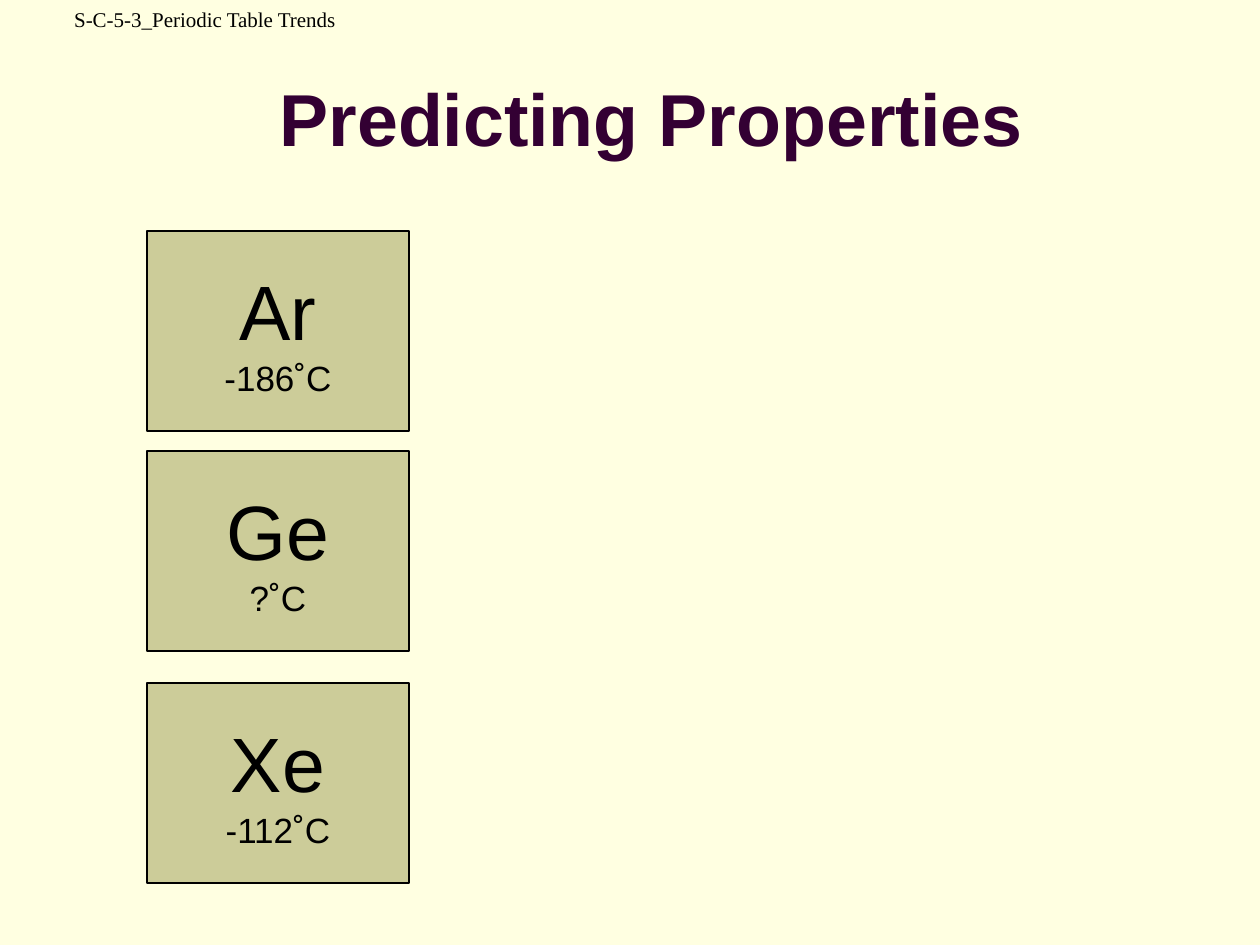
from pptx import Presentation
from pptx.dml.color import RGBColor
from pptx.enum.shapes import MSO_SHAPE
from pptx.enum.text import MSO_ANCHOR, PP_ALIGN
from pptx.util import Emu, Pt

CREAM = RGBColor(0xFF, 0xFF, 0xE1)
KHAKI = RGBColor(0xCC, 0xCC, 0x99)
PLUM = RGBColor(0x33, 0x00, 0x33)
BLACK = RGBColor(0x00, 0x00, 0x00)

ELEMENTS = [
    ("Ar", "-186˚C", 231),
    ("Ge", "?˚C", 451),
    ("Xe", "-112˚C", 683),
]
CARD_LEFT, CARD_W, CARD_H = 147, 262, 200

SYMBOL = {"name": "Arial", "size": Pt(44), "bold": False, "color": BLACK}
TEMPERATURE = {**SYMBOL, "size": Pt(20)}
TITLE = {"name": "Arial", "size": Pt(42), "bold": True, "color": PLUM}
HEADER = {"name": "Times New Roman", "size": Pt(12), "bold": False, "color": BLACK}

LABELS = [
    ("Predicting Properties ", TITLE, (126, 38, 1071, 158), MSO_ANCHOR.MIDDLE),
    ("S-C-5-3_Periodic Table Trends", HEADER, (0, 0, 410, 63), MSO_ANCHOR.TOP),
]


def px(n):
    return Emu(round(n * 914400 / 126))


def write(sp, lines, anchor, wrap):
    """Fill a shape with centred lines, each given as text and format."""
    tf = sp.text_frame
    tf.word_wrap = wrap
    tf.vertical_anchor = anchor
    for i, (text, fmt) in enumerate(lines):
        p = tf.add_paragraph() if i else tf.paragraphs[0]
        p.alignment = PP_ALIGN.CENTER
        r = p.add_run()
        r.text = text
        for key, value in fmt.items():
            if key == "color":
                r.font.color.rgb = value
            else:
                setattr(r.font, key, value)


def main():
    prs = Presentation()
    prs.slide_width, prs.slide_height = px(1260), px(945)
    s = prs.slides.add_slide(prs.slide_layouts[6])
    s.background.fill.solid()
    s.background.fill.fore_color.rgb = CREAM

    for symbol, temperature, top in ELEMENTS:
        box = map(px, (CARD_LEFT, top, CARD_W, CARD_H))
        sp = s.shapes.add_shape(MSO_SHAPE.RECTANGLE, *box)
        sp.shadow.inherit = False
        sp.fill.solid()
        sp.fill.fore_color.rgb = KHAKI
        sp.line.color.rgb = BLACK
        sp.line.width = Pt(0.75)
        lines = [(symbol, SYMBOL), (temperature, TEMPERATURE)]
        write(sp, lines, MSO_ANCHOR.MIDDLE, False)

    for text, fmt, box, anchor in LABELS:
        sp = s.shapes.add_textbox(*map(px, box))
        write(sp, [(text, fmt)], anchor, True)

    prs.save("out.pptx")


if __name__ == "__main__":
    main()
